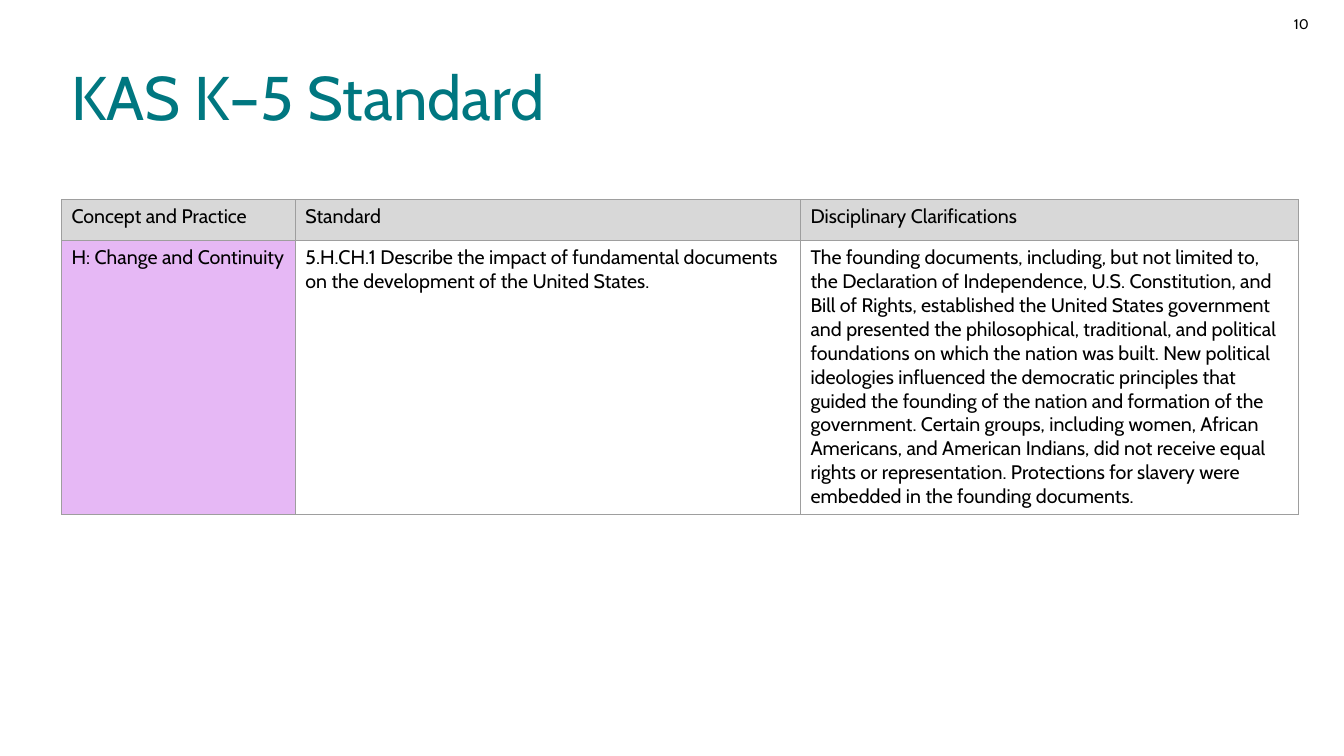
from lxml import etree
from pptx import Presentation
from pptx.dml.color import RGBColor
from pptx.enum import text
from pptx.oxml import ns
from pptx.util import Inches, Pt

FONT = "Cabin"
BLACK = RGBColor(0x00, 0x00, 0x00)
TEAL = RGBColor(0x00, 0x77, 0x80)
GRAY = RGBColor(0xD8, 0xD8, 0xD8)
LILAC = RGBColor(0xE6, 0xB8, 0xF5)
BORDER = RGBColor(0x9E, 0x9E, 0x9E)

COLUMN_WIDTHS = [2.32, 5.01, 4.94]
ROW_HEIGHTS = [0.41, 2.71]
ROWS = [
    ["Concept and Practice", "Standard", "Disciplinary Clarifications"],
    [
        "H: Change and Continuity",
        "5.H.CH.1 Describe the impact of fundamental documents on the "
        "development of the United States.",
        "The founding documents, including, but not limited to, the Declaration "
        "of Independence, U.S. Constitution, and Bill of Rights, established the "
        "United States government and presented the philosophical, traditional, "
        "and political foundations on which the nation was built. New political "
        "ideologies influenced the democratic principles that guided the founding "
        "of the nation and formation of the government. Certain groups, including "
        "women, African Americans, and American Indians, did not receive equal "
        "rights or representation. Protections for slavery were embedded in the "
        "founding documents.",
    ],
]
FILLS = [[GRAY, GRAY, GRAY], [LILAC, None, None]]


def write_text(text_frame, content, size, color):
    """Fill the frame with one formatted paragraph and return it."""
    text_frame.word_wrap = True
    text_frame.text = content
    paragraph = text_frame.paragraphs[0]
    font = paragraph.runs[0].font
    font.name = FONT
    font.size = Pt(size)
    font.color.rgb = color
    return paragraph


def add_borders(cell):
    """Draw a thin line on all four sides; call before setting the fill."""
    properties = cell._tc.get_or_add_tcPr()
    for side in ("a:lnL", "a:lnR", "a:lnT", "a:lnB"):
        line = etree.SubElement(properties, ns.qn(side), w=str(Pt(0.75)))
        solid = etree.SubElement(line, ns.qn("a:solidFill"))
        etree.SubElement(solid, ns.qn("a:srgbClr"), val=str(BORDER))


presentation = Presentation()
presentation.slide_width = Inches(13.33)
presentation.slide_height = Inches(7.5)
slide = presentation.slides.add_slide(presentation.slide_layouts[6])

page_number = slide.shapes.add_textbox(
    Inches(12.42), Inches(0.1), Inches(0.66), Inches(0.4))
paragraph = write_text(page_number.text_frame, "10", 10, BLACK)
paragraph.alignment = text.PP_ALIGN.RIGHT

title = slide.shapes.add_textbox(
    Inches(0.61), Inches(0.28), Inches(9.4), Inches(1.44))
title.text_frame.vertical_anchor = text.MSO_ANCHOR.MIDDLE
paragraph = write_text(title.text_frame, "KAS K–5 Standard", 44, TEAL)
paragraph.line_spacing = 0.9

table = slide.shapes.add_table(
    len(ROWS), len(COLUMN_WIDTHS), Inches(0.61), Inches(1.98),
    Inches(sum(COLUMN_WIDTHS)), Inches(sum(ROW_HEIGHTS))).table
for column, width in zip(table.columns, COLUMN_WIDTHS):
    column.width = Inches(width)
for row, height, contents, fills in zip(table.rows, ROW_HEIGHTS, ROWS, FILLS):
    row.height = Inches(height)
    for cell, content, fill in zip(row.cells, contents, fills):
        write_text(cell.text_frame, content, 14, BLACK).runs[0].font.bold = False
        add_borders(cell)
        if fill is None:
            cell.fill.background()
        else:
            cell.fill.solid()
            cell.fill.fore_color.rgb = fill

presentation.save("out.pptx")
